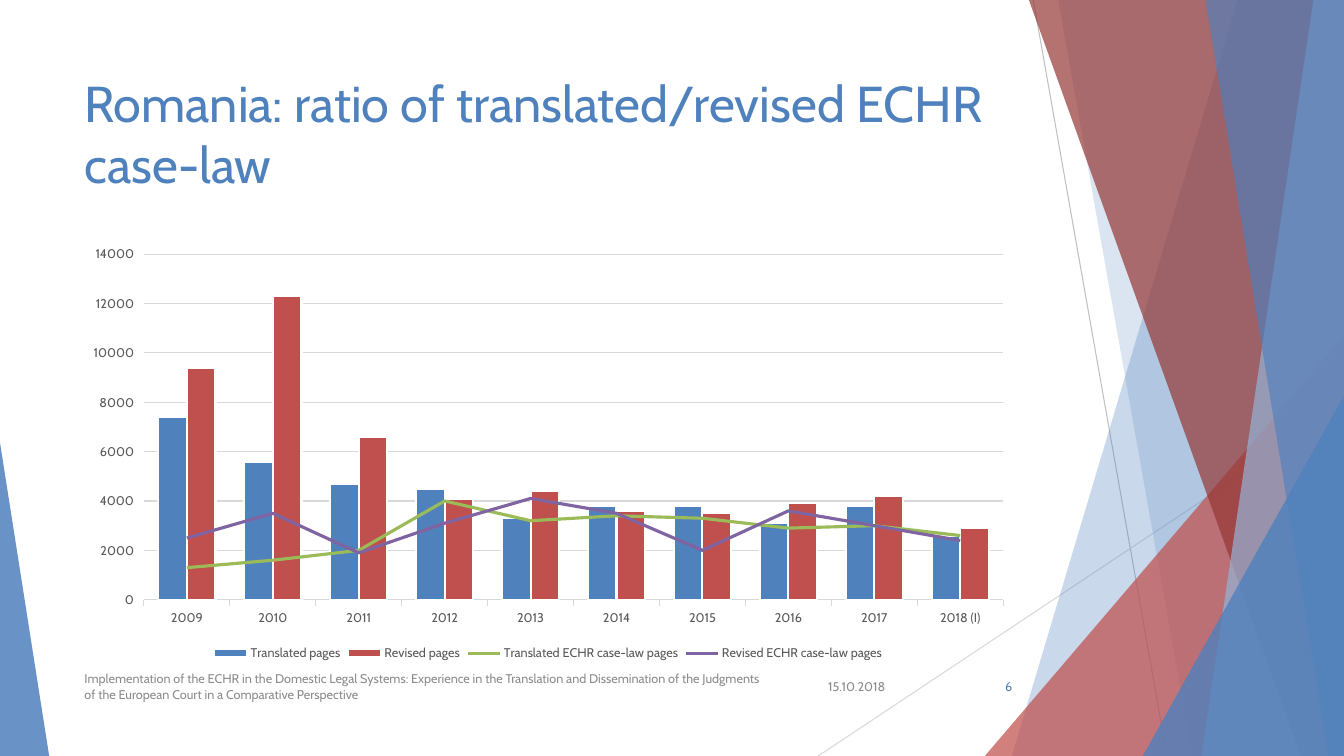
from lxml import etree
from pptx import Presentation
from pptx import util as u
from pptx.chart.data import CategoryChartData
from pptx.dml.color import RGBColor
from pptx.enum import chart as charts, shapes, text
from pptx.oxml import ns, xmlchemy

BLUE = RGBColor(0x4F, 0x81, 0xBD)
PALE_BLUE = RGBColor(0x95, 0xB3, 0xD7)
RED = RGBColor(0xC0, 0x50, 0x4D)
DARK_RED = RGBColor(0x95, 0x37, 0x35)
GREEN = RGBColor(0x9B, 0xBB, 0x59)
PURPLE = RGBColor(0x80, 0x64, 0xA2)
WHITE = RGBColor(0xFF, 0xFF, 0xFF)
GREY = RGBColor(0x8C, 0x8C, 0x8C)
DARK_GREY = RGBColor(0x59, 0x59, 0x59)
LIGHT_GREY = RGBColor(0xD9, 0xD9, 0xD9)
MID_GREY = RGBColor(0xBF, 0xBF, 0xBF)
FONT = "Cabin"
WIDTH, HEIGHT = 33.87, 19.05
LEFT, CONTENT_WIDTH = 1.88, 23.88
FOOTER_TOP, FOOTER_HEIGHT = 16.79, 1.02

THIN_LINES = [
    ((26.04, 0), (29.41, HEIGHT), MID_GREY),
    ((WIDTH, 10.24), (20.62, HEIGHT), LIGHT_GREY),
]
DECORATION = [
    ("band", (31.19, 25.5), BLUE, 30),
    ("band", (26.67, 30.05), BLUE, 20),
    ("triangle", (24.82, 8.46, WIDTH, 1), RED, 72),
    ("band", (25.93, 32.79), DARK_RED, 70),
    ("band", (33.1, 30.28), PALE_BLUE, 70),
    ("band", (30.38, 33.48), BLUE, 65),
    ("triangle", (28.8, 9.98, WIDTH, 1), BLUE, 80),
    ("triangle", (0, 11.15, 1.24, 0), BLUE, 85),
]
LEFT_ALIGN, RIGHT_ALIGN = text.PP_ALIGN.LEFT, text.PP_ALIGN.RIGHT
TOP, MIDDLE = text.MSO_ANCHOR.TOP, text.MSO_ANCHOR.MIDDLE
TEXTS = [
    ("Romania: ratio of translated/revised ECHR case-law",
     (LEFT, 1.7, CONTENT_WIDTH, 3.66), 36, BLUE, LEFT_ALIGN, TOP),
    ("15.10.2018",
     (20.02, FOOTER_TOP, 2.54, FOOTER_HEIGHT), 9, GREY, RIGHT_ALIGN, MIDDLE),
    ("Implementation of the ECHR in the Domestic Legal Systems: Experience in the "
     "Translation and Dissemination of the Judgments of the European Court in a "
     "Comparative Perspective",
     (LEFT, FOOTER_TOP, 17.5, FOOTER_HEIGHT), 9, GREY, LEFT_ALIGN, MIDDLE),
    ("6", (23.85, FOOTER_TOP, 1.91, FOOTER_HEIGHT), 9, BLUE, RIGHT_ALIGN, MIDDLE),
]
CHART_BOX = (LEFT, 5.99, CONTENT_WIDTH, 10.77)
PERIODS = [str(year) for year in range(2009, 2018)] + ["2018 (I)"]
COLUMNS = [
    ("Translated pages", BLUE,
     (7400, 5600, 4700, 4500, 3300, 3800, 3800, 3100, 3800, 2600)),
    ("Revised pages", RED,
     (9400, 12300, 6600, 4100, 4400, 3600, 3500, 3900, 4200, 2900)),
]
LINES = [
    ("Translated ECHR case-law pages", GREEN,
     (1300, 1600, 2000, 4000, 3200, 3400, 3300, 2900, 3000, 2600)),
    ("Revised ECHR case-law pages", PURPLE,
     (2500, 3500, 1900, 3100, 4100, 3500, 2000, 3600, 3000, 2400)),
]


def lengths(*values):
    return [u.Cm(value) for value in values]


def add_thin_line(slide, start, end, color):
    connector = slide.shapes.add_connector(
        shapes.MSO_CONNECTOR.STRAIGHT, *lengths(*start, *end))
    connector.line.color.rgb = color
    connector.line.width = u.Pt(0.75)
    etree.SubElement(connector._element.spPr, ns.qn("a:effectLst"))


def add_band(slide, top_x, bottom_x):
    corners = [lengths(*corner) for corner in (
        (top_x, 0), (WIDTH, 0), (WIDTH, HEIGHT), (bottom_x, HEIGHT))]
    builder = slide.shapes.build_freeform(*corners[0], scale=1.0)
    builder.add_line_segments(corners[1:], close=True)
    return builder.convert_to_shape()


def add_triangle(slide, left, top, right, apex):
    shape = slide.shapes.add_shape(
        shapes.MSO_SHAPE.ISOSCELES_TRIANGLE,
        *lengths(left, top, right - left, HEIGHT - top))
    shape.adjustments[0] = apex
    return shape


def paint(shape, color, opacity):
    shape.shadow.inherit = False
    shape.line.fill.background()
    shape.fill.solid()
    shape.fill.fore_color.rgb = color
    color_node = shape._element.spPr.find(".//" + ns.qn("a:srgbClr"))
    etree.SubElement(color_node, ns.qn("a:alpha"), val=str(opacity * 1000))


def style_font(font, size, color):
    font.name = FONT
    font.size = u.Pt(size)
    font.color.rgb = color


def add_text(slide, content, box, size, color, alignment, anchor):
    frame = slide.shapes.add_textbox(*lengths(*box)).text_frame
    frame.word_wrap = True
    frame.vertical_anchor = anchor
    paragraph = frame.paragraphs[0]
    paragraph.alignment = alignment
    run = paragraph.add_run()
    run.text = content
    style_font(run.font, size, color)


def split_off_lines(chart):
    bar_plot = chart.plots[0]._element
    line_plot = xmlchemy.OxmlElement("c:lineChart")
    etree.SubElement(line_plot, ns.qn("c:grouping"), val="standard")
    etree.SubElement(line_plot, ns.qn("c:varyColors"), val="0")
    for series in bar_plot.findall(ns.qn("c:ser"))[len(COLUMNS):]:
        for bar_setting in series.findall(ns.qn("c:invertIfNegative")):
            series.remove(bar_setting)
        line_plot.append(series)
    etree.SubElement(line_plot, ns.qn("c:marker"), val="1")
    for axis in bar_plot.findall(ns.qn("c:axId")):
        etree.SubElement(line_plot, ns.qn("c:axId"), val=axis.get("val"))
    bar_plot.addnext(line_plot)


def add_pages_chart(slide):
    data = CategoryChartData()
    data.categories = PERIODS
    for name, color, values in COLUMNS + LINES:
        data.add_series(name, values)
    chart = slide.shapes.add_chart(
        charts.XL_CHART_TYPE.COLUMN_CLUSTERED, *lengths(*CHART_BOX), data).chart
    chart.has_title = False
    style_font(chart.font, 9, DARK_GREY)
    chart.has_legend = True
    chart.legend.position = charts.XL_LEGEND_POSITION.BOTTOM
    chart.legend.include_in_layout = False
    style_font(chart.legend.font, 9, DARK_GREY)
    split_off_lines(chart)

    column_plot, line_plot = chart.plots
    column_plot.gap_width = 100
    column_plot.overlap = 0
    column_plot.vary_by_categories = False
    for series, (name, color, values) in zip(column_plot.series, COLUMNS):
        series.format.fill.solid()
        series.format.fill.fore_color.rgb = color
        series.format.line.color.rgb = WHITE
        series.format.line.width = u.Pt(1.5)
    for series, (name, color, values) in zip(line_plot.series, LINES):
        series.smooth = False
        series.marker.style = charts.XL_MARKER_STYLE.NONE
        series.format.line.color.rgb = color
        series.format.line.width = u.Pt(2.25)

    for axis in (chart.category_axis, chart.value_axis):
        style_font(axis.tick_labels.font, 9, DARK_GREY)
        axis.major_tick_mark = charts.XL_TICK_MARK.OUTSIDE
    chart.value_axis.format.line.fill.background()
    chart.value_axis.minimum_scale = 0
    chart.value_axis.maximum_scale = 14000
    chart.value_axis.major_unit = 2000
    for line in (chart.category_axis.format.line,
                 chart.value_axis.major_gridlines.format.line):
        line.color.rgb = LIGHT_GREY
        line.width = u.Pt(0.75)


def main():
    presentation = Presentation()
    presentation.slide_width, presentation.slide_height = lengths(WIDTH, HEIGHT)
    slide = presentation.slides.add_slide(presentation.slide_layouts[6])
    for thin_line in THIN_LINES:
        add_thin_line(slide, *thin_line)
    builders = {"band": add_band, "triangle": add_triangle}
    for kind, geometry, color, opacity in DECORATION:
        paint(builders[kind](slide, *geometry), color, opacity)
    for item in TEXTS:
        add_text(slide, *item)
    add_pages_chart(slide)
    presentation.save("out.pptx")


if __name__ == "__main__":
    main()
